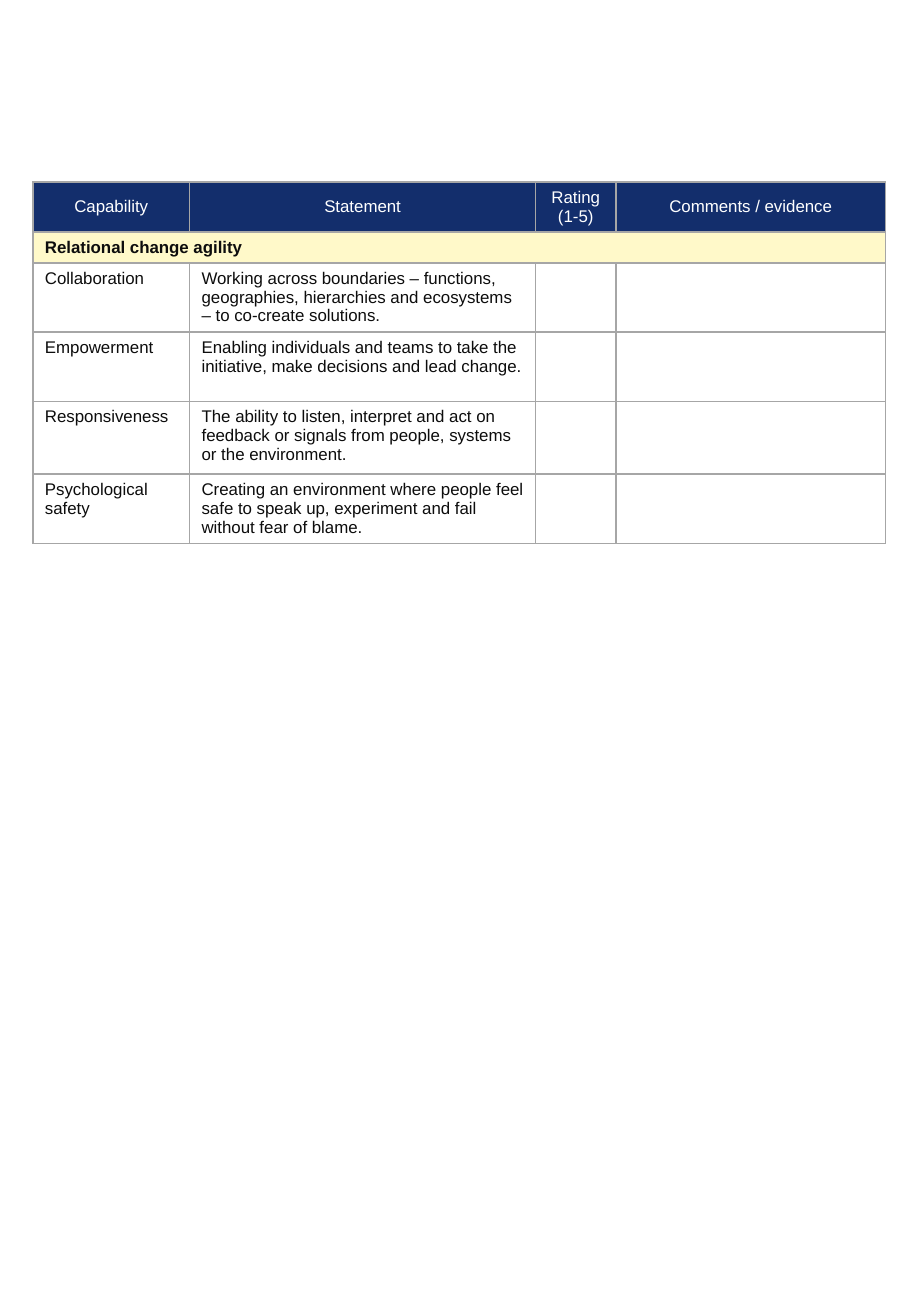
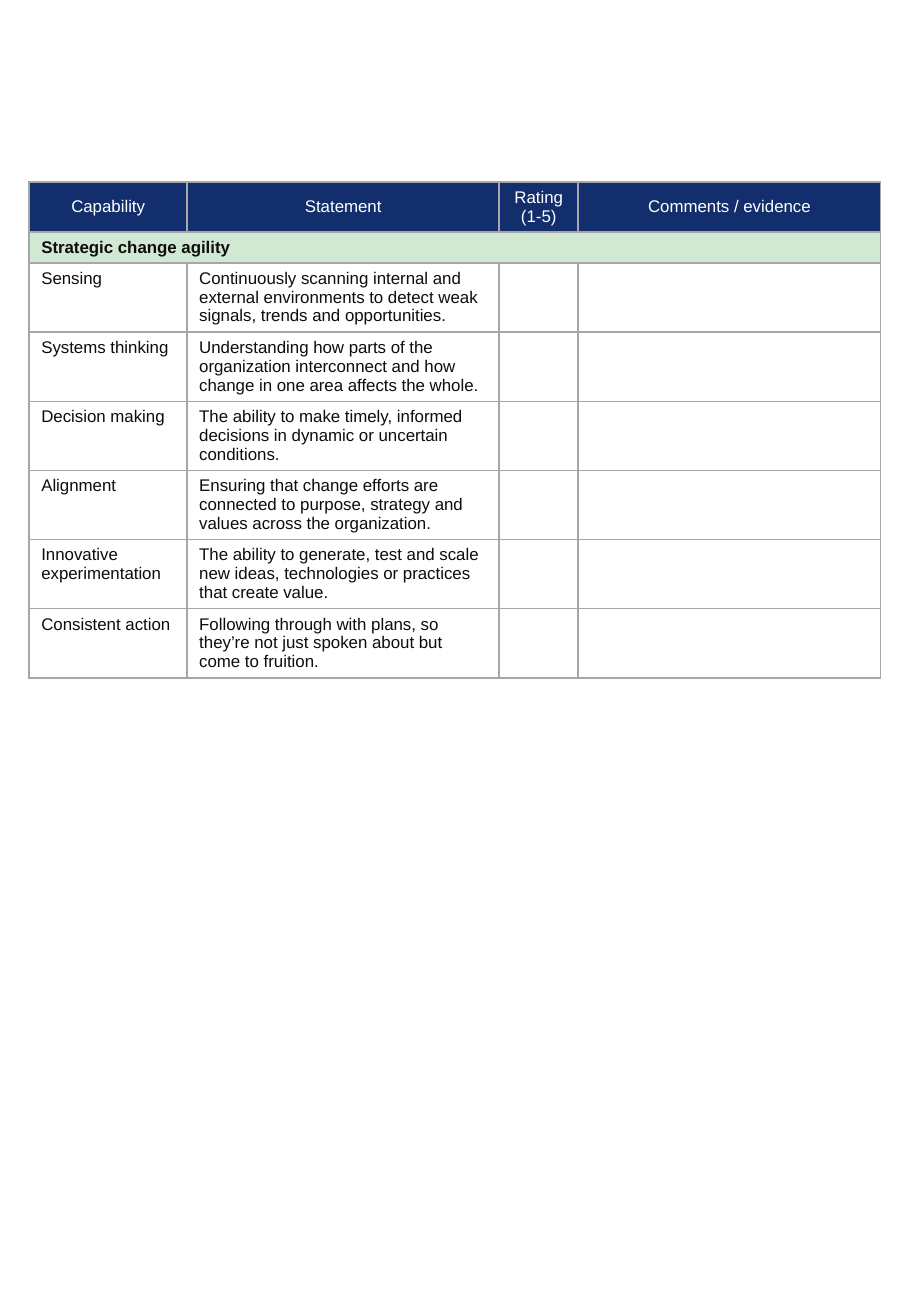
"""Build two change agility rating sheets, one table per slide."""
from lxml.etree import SubElement
from pptx import Presentation
from pptx.dml.color import RGBColor
from pptx.enum.text import MSO_ANCHOR, PP_ALIGN
from pptx.oxml.ns import qn
from pptx.util import Inches, Pt

HEADERS = ["Capability", "Statement", "Rating (1-5)", "Comments / evidence"]
SHEETS = [
    {
        "section": "Relational change agility",
        "fill": ("FFF9C9", 100),
        "left": 0.27,
        "cols": [1.29, 2.85, 0.66, 2.22],
        "rows": [
            ("Collaboration", "Working across boundaries – functions, geographies, "
             "hierarchies and ecosystems – to co-create solutions."),
            ("Empowerment", "Enabling individuals and teams to take the initiative, "
             "make decisions and lead change."),
            ("Responsiveness", "The ability to listen, interpret and act on feedback "
             "or signals from people, systems or the environment."),
            ("Psychological safety", "Creating an environment where people feel safe "
             "to speak up, experiment and fail without fear of blame."),
        ],
        "tall": {"Responsiveness": 0.6},
    },
    {
        "section": "Strategic change agility",
        "fill": ("2F9E37", 22),
        "left": 0.24,
        "cols": [1.3, 2.57, 0.65, 2.49],
        "rows": [
            ("Sensing", "Continuously scanning internal and external environments "
             "to detect weak signals, trends and opportunities."),
            ("Systems thinking", "Understanding how parts of the organization "
             "interconnect and how change in one area affects the whole."),
            ("Decision making", "The ability to make timely, informed decisions in "
             "dynamic or uncertain conditions."),
            ("Alignment", "Ensuring that change efforts are connected to purpose, "
             "strategy and values across the organization."),
            ("Innovative experimentation", "The ability to generate, test and scale "
             "new ideas, technologies or practices that create value."),
            ("Consistent action", "Following through with plans, so they’re not just "
             "spoken about but come to fruition."),
        ],
        "tall": {},
    },
]
NAVY, INK, WHITE, GREY = "132E6C", "0D0D0D", "FFFFFF", "A6A6A6"
TOP, HEADER_H, SECTION_H, ROW_H = 1.5, 0.41, 0.25, 0.57
FONT = {"name": "Arial", "size": Pt(10)}


def rgb(code):
    """Turn a hex string into a colour."""
    return RGBColor.from_string(code)


def add_borders(cell):
    """Draw a thin grey line on each side of a cell."""
    tc_pr = cell._tc.get_or_add_tcPr()
    for side in ("lnL", "lnR", "lnT", "lnB"):
        ln = SubElement(tc_pr, qn(f"a:{side}"), w=str(Pt(1)))
        fill = SubElement(ln, qn("a:solidFill"))
        SubElement(fill, qn("a:srgbClr"), val=GREY)


def fill_cell(cell, color, opacity=100):
    """Fill a cell, or leave it clear when there is no colour."""
    if not color:
        cell.fill.background()
        return
    cell.fill.solid()
    cell.fill.fore_color.rgb = rgb(color)
    if opacity < 100:
        clr = cell._tc.tcPr.find(qn("a:solidFill")).find(qn("a:srgbClr"))
        SubElement(clr, qn("a:alpha"), val=str(opacity * 1000))


def write_cell(cell, text, color=INK, bold=False, align=PP_ALIGN.LEFT):
    """Write one run of formatted text."""
    p = cell.text_frame.paragraphs[0]
    p.alignment = align
    r = p.add_run()
    r.text = text
    for key, value in {**FONT, "bold": bold}.items():
        setattr(r.font, key, value)
    r.font.color.rgb = rgb(color)


def add_sheet(prs, sheet):
    """Add a slide with one rating table."""
    s = prs.slides.add_slide(prs.slide_layouts[6])
    heights = [HEADER_H, SECTION_H]
    heights += [sheet["tall"].get(name, ROW_H) for name, _ in sheet["rows"]]
    table = s.shapes.add_table(
        len(heights), len(HEADERS), Inches(sheet["left"]), Inches(TOP),
        Inches(sum(sheet["cols"])), Inches(sum(heights))).table
    table.first_row = table.horz_banding = False
    for col, width in zip(table.columns, sheet["cols"]):
        col.width = Inches(width)
    for row, height in zip(table.rows, heights):
        row.height = Inches(height)
    table.cell(1, 0).merge(table.cell(1, len(HEADERS) - 1))

    fills = [(NAVY,), sheet["fill"]] + [(None,)] * len(sheet["rows"])
    for row, fill in zip(table.rows, fills):
        for cell in row.cells:
            add_borders(cell)
            fill_cell(cell, *fill)

    for c, header in enumerate(HEADERS):
        cell = table.cell(0, c)
        cell.vertical_anchor = MSO_ANCHOR.MIDDLE
        write_cell(cell, header, WHITE, align=PP_ALIGN.CENTER)
    write_cell(table.cell(1, 0), sheet["section"], bold=True)
    for r, texts in enumerate(sheet["rows"], 2):
        for c, text in enumerate(texts):
            write_cell(table.cell(r, c), text)


def main():
    """Build and save the presentation."""
    prs = Presentation()
    prs.slide_width, prs.slide_height = Inches(7.5), Inches(10.84)
    for sheet in SHEETS:
        add_sheet(prs, sheet)
    prs.save("out.pptx")


if __name__ == "__main__":
    main()
